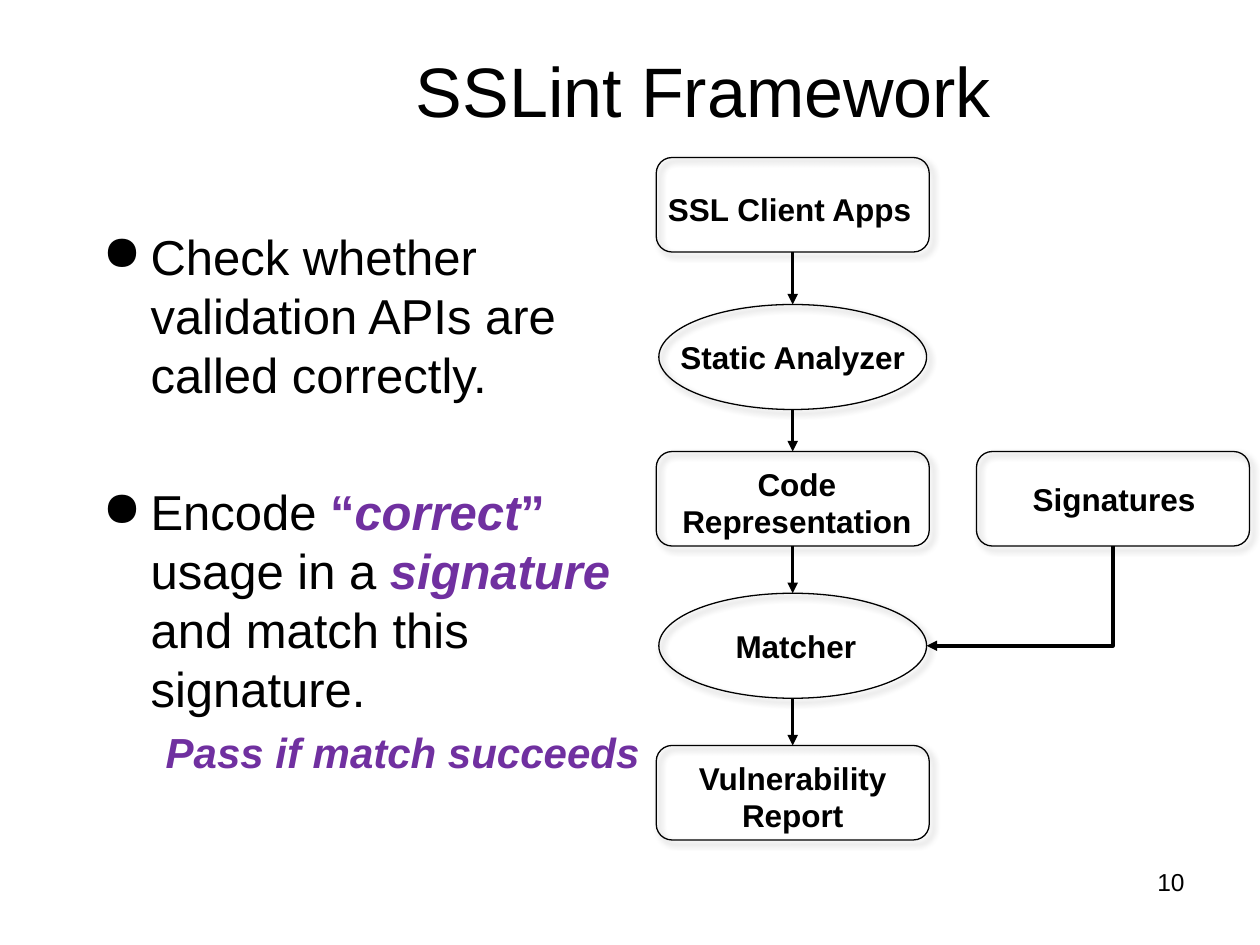
from dataclasses import dataclass

from lxml import etree
from pptx import Presentation
from pptx.dml.color import RGBColor
from pptx.enum.shapes import MSO_CONNECTOR, MSO_SHAPE
from pptx.enum.text import MSO_ANCHOR, PP_ALIGN
from pptx.oxml import parse_xml
from pptx.oxml.ns import nsdecls, qn
from pptx.util import Inches, Pt


@dataclass(frozen=True)
class Theme:
    font: str = "Arial"
    ink: RGBColor = RGBColor(0, 0, 0)
    accent: RGBColor = RGBColor(0x70, 0x30, 0xA0)
    title: int = 40
    body: int = 28
    sub: int = 24
    label: int = 18
    number: int = 14
    outline: float = 0.75
    arrow: float = 2


THEME = Theme()
COLUMNS, ROWS = 120, 90
CELL = Inches(10) / COLUMNS
TOP, BOTTOM = 0, 2

BOX = (MSO_SHAPE.FLOWCHART_ALTERNATE_PROCESS, 26, 9)
OVAL = (MSO_SHAPE.OVAL, 25.5, 10)

# name: (kind, centre column, top row, label lines, label width, label shift)
NODES = {
    "apps": (BOX, 13, 0, ["SSL Client Apps"], 25.8, (-0.3, 0.4)),
    "analyzer": (OVAL, 13, 14, ["Static Analyzer"], 24, (0, 0)),
    "code": (BOX, 13, 28, ["Code", "Representation"], 24.5, (0.4, 0.4)),
    "matcher": (OVAL, 13, 41.5, ["Matcher"], 14, (0.3, 0)),
    "report": (BOX, 13, 56, ["Vulnerability", "Report"], 20.5, (0, 0.4)),
    "signatures": (BOX, 43.5, 28, ["Signatures"], 18.1, (0.1, 0)),
}
FLOW = ["apps", "analyzer", "code", "matcher", "report"]


def grid(*cells):
    return [round(cell * CELL) for cell in cells]


def style(font, size, color=THEME.ink, bold=False, italic=False):
    font.name, font.size = THEME.font, Pt(size)
    font.color.rgb = color
    font.bold, font.italic = bold, italic


def add_text(page, box, lines, size, align, bold=False, wrap=True, anchor=MSO_ANCHOR.TOP):
    frame = page.shapes.add_textbox(*grid(*box)).text_frame
    frame.word_wrap, frame.vertical_anchor = wrap, anchor
    for index, line in enumerate(lines):
        para = frame.add_paragraph() if index else frame.paragraphs[0]
        para.text, para.alignment = line, align
        style(para.font, size, bold=bold)


def add_points(page, box):
    frame = page.shapes.add_textbox(*grid(*box)).text_frame
    frame.word_wrap = True
    plain, strong, slanted = (False, False), (True, False), (True, True)
    # (bulleted, indent, space before, size, spans)
    points = [
        (True, 0.38, 0, THEME.body,
         [("Check whether validation APIs are called correctly.", plain)]),
        (True, 0.38, 45, THEME.body,
         [("Encode ", plain), ("“", strong), ("correct", slanted), ("” ", strong),
          ("usage in a ", plain), ("signature", slanted),
          (" and match this signature.", plain)]),
        (False, 0.5, 5, THEME.sub, [("Pass if match succeeds", slanted)]),
    ]
    for index, (bulleted, indent, space, size, spans) in enumerate(points):
        para = frame.add_paragraph() if index else frame.paragraphs[0]
        properties = para._p.get_or_add_pPr()
        properties.set("marL", str(Inches(indent)))
        properties.set("indent", str(-Inches(indent) if bulleted else 0))
        if bulleted:
            etree.SubElement(properties, qn("a:buChar")).set("char", "●")
        para.space_before = Pt(space)
        for text, (bold, italic) in spans:
            span = para.add_run()
            span.text = text
            style(span.font, size, THEME.accent if bold else THEME.ink, bold, italic)


def add_node(page, left, top, node):
    """Draw an outlined node and its label; left and top are the diagram's corner."""
    (kind, width, height), center, row, lines, label_width, (shift_x, shift_y) = node
    x, y = left + center, top + row
    shape = page.shapes.add_shape(kind, *grid(x - width / 2, y, width, height))
    shape.fill.background()
    shape.line.color.rgb, shape.line.width = THEME.ink, Pt(THEME.outline)
    shape.shadow.inherit = False
    effects = shape._element.spPr.find(qn("a:effectLst"))
    effects.append(parse_xml(
        f'<a:outerShdw {nsdecls("a")} blurRad="{Pt(4)}" dist="{Pt(3)}" dir="2700000">'
        f'<a:srgbClr val="{THEME.ink}"><a:alpha val="40000"/></a:srgbClr></a:outerShdw>'))
    label_height = 4.8 if len(lines) == 1 else 8.5
    label = (x - label_width / 2 + shift_x, y + (height - label_height) / 2 + shift_y,
             label_width, label_height)
    add_text(page, label, lines, THEME.label, PP_ALIGN.CENTER, bold=True, wrap=False)
    return shape


def add_arrow(page, kind, start, end):
    arrow = page.shapes.add_connector(kind, *start, *end)
    arrow.line.color.rgb, arrow.line.width = THEME.ink, Pt(THEME.arrow)
    etree.SubElement(arrow.line._get_or_add_ln(), qn("a:tailEnd")).set("type", "triangle")
    etree.SubElement(arrow._element.spPr, qn("a:effectLst"))
    return arrow


def bottom_middle(shape):
    return shape.left + shape.width // 2, shape.top + shape.height


def add_corner_arrow(page, start, end):
    """Go straight down from start, then left to end."""
    arrow = add_arrow(page, MSO_CONNECTOR.ELBOW, start, end)
    across, down = start[0] - end[0], end[1] - start[1]
    arrow._element.spPr.find(qn("a:prstGeom")).set("prst", "bentConnector2")
    arrow._element.spPr.find(qn("a:xfrm")).attrib.pop("flipH", None)
    arrow._element.spPr.find(qn("a:xfrm")).set("rot", "5400000")
    arrow.left = end[0] + (across - down) // 2
    arrow.top = start[1] + (down - across) // 2
    arrow.width, arrow.height = down, across


def add_diagram(page, left, top):
    shapes = {name: add_node(page, left, top, node) for name, node in NODES.items()}
    for source, target in zip(FLOW, FLOW[1:]):
        above, below = shapes[source], shapes[target]
        arrow = add_arrow(page, MSO_CONNECTOR.STRAIGHT, bottom_middle(above),
                          (below.left + below.width // 2, below.top))
        if NODES[source][0] is BOX:
            arrow.begin_connect(above, BOTTOM)
        else:
            arrow.end_connect(below, TOP)
    matcher = shapes["matcher"]
    add_corner_arrow(page, bottom_middle(shapes["signatures"]),
                     (matcher.left + matcher.width, matcher.top + matcher.height // 2))


def main():
    deck = Presentation()
    deck.slide_width, deck.slide_height = grid(COLUMNS, ROWS)
    page = deck.slides.add_slide(deck.slide_layouts[6])
    add_text(page, (13, 1, 108, 15), ["SSLint Framework"], THEME.title,
             PP_ALIGN.CENTER, anchor=MSO_ANCHOR.MIDDLE)
    add_text(page, (86, 82, 28, 6.25), ["10"], THEME.number, PP_ALIGN.RIGHT)
    add_points(page, (8.6, 21, 55.3, 64))
    add_diagram(page, 62.5, 15)
    deck.save("out.pptx")


if __name__ == "__main__":
    main()
